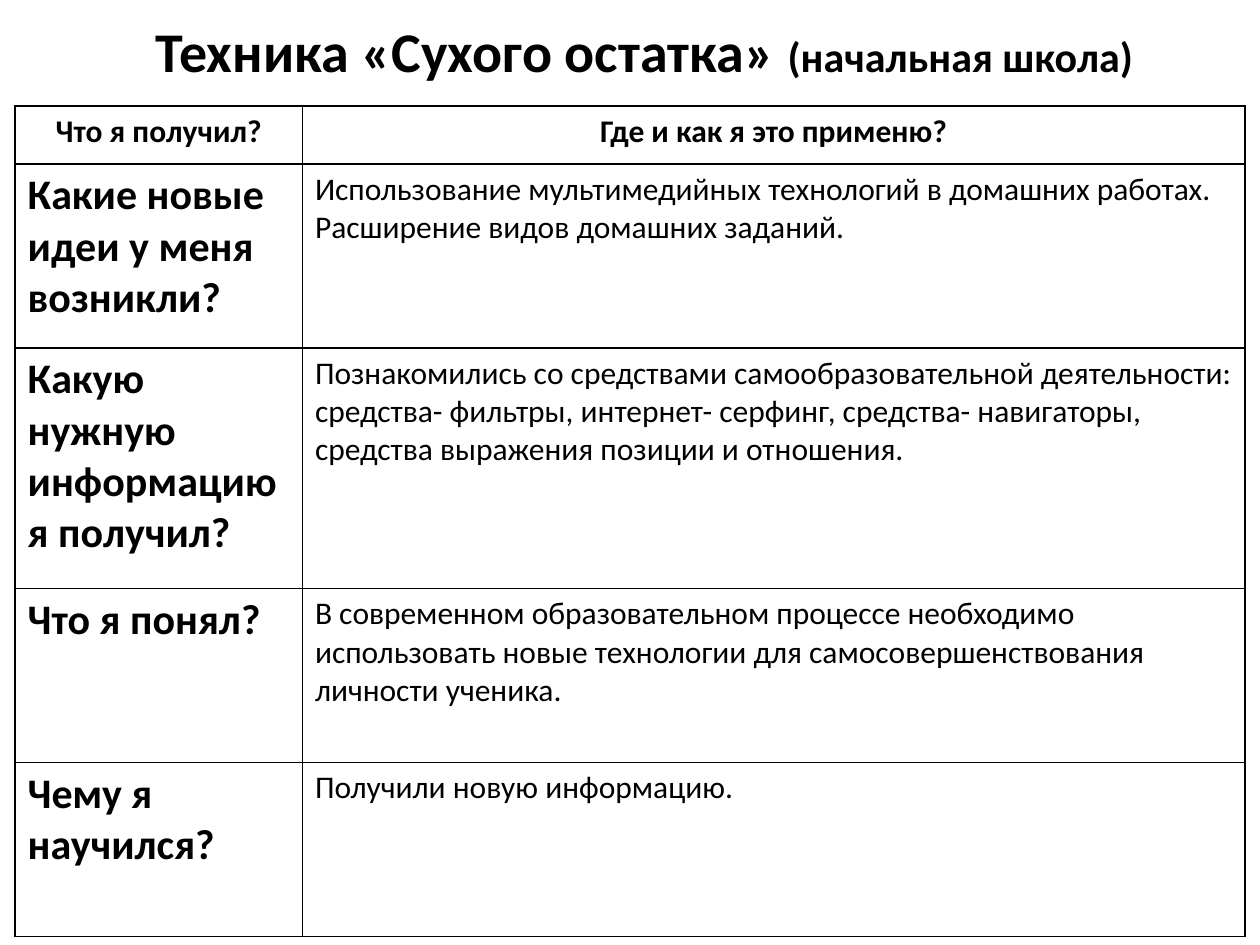
import dataclasses

import lxml.etree
import pptx
import pptx.dml.color
import pptx.enum.text
import pptx.oxml.ns
import pptx.util

ALIGN = pptx.enum.text.PP_ALIGN


@dataclasses.dataclass(frozen=True)
class Theme:
    font: str = "Calibri"
    ink: str = "000000"
    title: int = 32
    large: int = 24
    body: int = 18
    line: int = 1


THEME = Theme()
WIDE, HIGH = 10, 7.5

TITLE = (("Техника «Сухого остатка» ", THEME.title),
         ("(начальная школа)", THEME.large))
HEAD = ("Что я получил?", "Где и как я это применю?")
ROWS = (
    ("Какие новые идеи у меня возникли?",
     "Использование мультимедийных технологий в домашних работах. "
     "Расширение видов домашних заданий."),
    ("Какую нужную информацию я получил?",
     "Познакомились со средствами самообразовательной деятельности: "
     "средства- фильтры, интернет- серфинг, средства- навигаторы, "
     "средства выражения позиции и отношения."),
    ("Что я понял?",
     "В современном образовательном процессе необходимо использовать "
     "новые технологии для самосовершенствования личности ученика."),
    ("Чему я научился?", "Получили новую информацию."),
)
# Relative column widths and row heights of the table
COLS = (2.28, 7.48)
TALL = (0.46, 1.46, 1.91, 1.38, 1.38)


def style(run, size, bold):
    run.font.name = THEME.font
    run.font.size = pptx.util.Pt(size)
    run.font.bold = bold
    run.font.color.rgb = pptx.dml.color.RGBColor.from_string(THEME.ink)


def split(total, parts):
    """Share a length out in proportion to the parts."""
    return [int(total * part / sum(parts)) for part in parts]


def edge(cell):
    """Draw a thin line on all four sides of a cell."""
    props = cell._tc.get_or_add_tcPr()
    name = pptx.oxml.ns.qn
    for spot, side in enumerate(("a:lnL", "a:lnR", "a:lnT", "a:lnB")):
        line = lxml.etree.Element(name(side), w=str(pptx.util.Pt(THEME.line)))
        fill = lxml.etree.SubElement(line, name("a:solidFill"))
        lxml.etree.SubElement(fill, name("a:srgbClr"), val=THEME.ink)
        props.insert(spot, line)


def add_title(slide, box):
    frame = slide.shapes.add_textbox(*box).text_frame
    frame.word_wrap = True
    frame.vertical_anchor = pptx.enum.text.MSO_ANCHOR.MIDDLE
    para = frame.paragraphs[0]
    para.alignment = ALIGN.CENTER
    for text, size in TITLE:
        run = para.add_run()
        run.text = text
        style(run, size, True)


def add_grid(slide, box):
    cells = (HEAD, *ROWS)
    table = slide.shapes.add_table(len(cells), len(COLS), *box).table
    table.first_row = table.horz_banding = False
    for col, width in zip(table.columns, split(box[2], COLS)):
        col.width = width
    for row, height in zip(table.rows, split(box[3], TALL)):
        row.height = height

    # Heading row is centred; below it the questions are large and bold
    for r, texts in enumerate(cells):
        for c, text in enumerate(texts):
            cell = table.cell(r, c)
            cell.fill.background()
            edge(cell)
            para = cell.text_frame.paragraphs[0]
            para.text = text
            para.alignment = ALIGN.LEFT if r else ALIGN.CENTER
            size = THEME.large if r and c == 0 else THEME.body
            style(para.runs[0], size, r == 0 or c == 0)


def main():
    deck = pptx.Presentation()
    deck.slide_width = pptx.util.Inches(WIDE)
    deck.slide_height = pptx.util.Inches(HIGH)
    slide = deck.slides.add_slide(deck.slide_layouts[6])

    def area(left, top, width, height):
        """Turn inches on the slide into a box."""
        return [pptx.util.Inches(n) for n in (left, top, width, height)]

    # Title above, table below
    add_title(slide, area(0.043 * WIDE, 0.017 * HIGH, 0.937 * WIDE, 0.073 * HIGH))
    margin = 0.012 * WIDE
    add_grid(slide, area(margin, 0.112 * HIGH, WIDE - 2 * margin, 0.879 * HIGH))
    deck.save("out.pptx")


if __name__ == "__main__":
    main()
